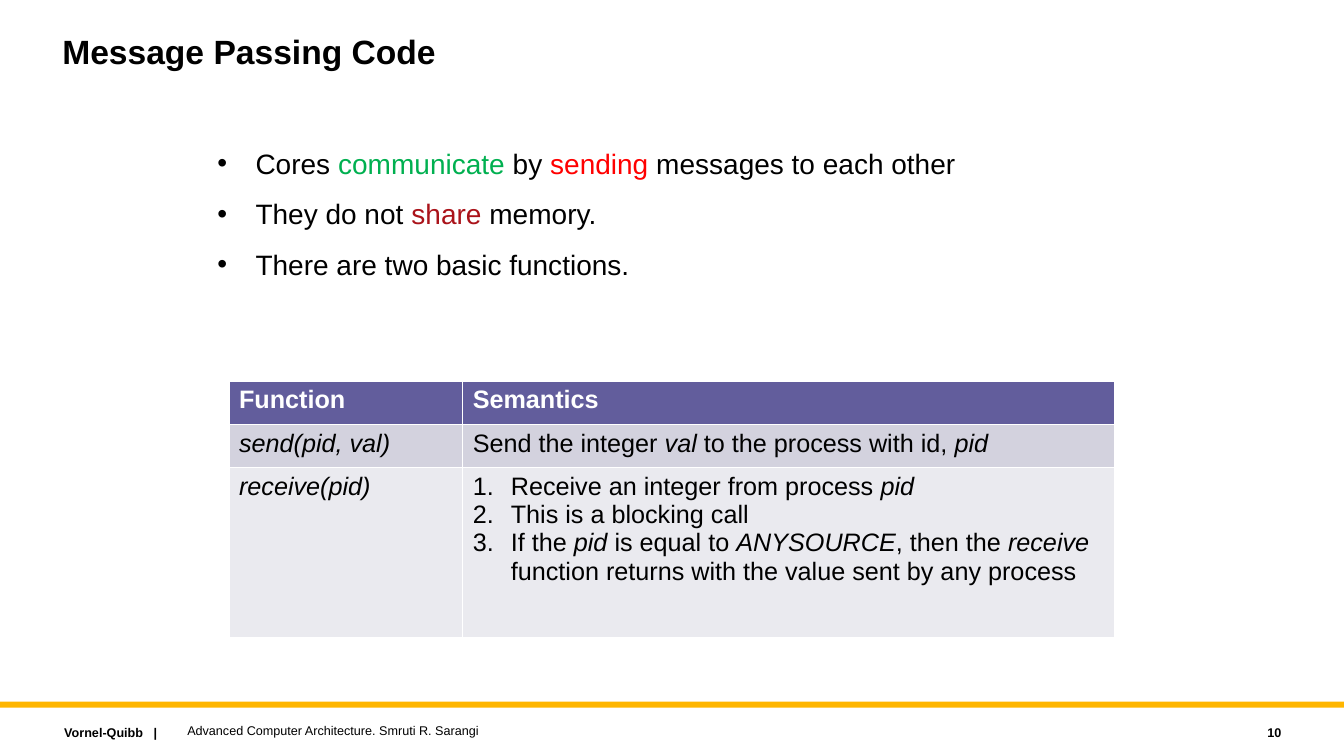
from lxml import etree
from pptx import Presentation
from pptx import util as u
from pptx.dml.color import RGBColor
from pptx.enum import shapes, text
from pptx.oxml import ns

Cm = u.Cm
HUES = {
    "black": "000000", "white": "FFFFFF", "gold": "FFB600",
    "green": "00B050", "red": "FF0000", "wine": "AA131A",
    "head": "625D9C", "dark": "D3D2DE", "light": "EAEAEF",
}


def write(para, parts, size, hue="black", bold=False):
    for words, style in parts:
        run = para.add_run()
        run.text = words
        font = run.font
        font.name = "Arial"
        font.size = u.Pt(size)
        font.bold = bold
        font.italic = style == "italic"
        font.color.rgb = RGBColor.from_string(HUES.get(style, HUES[hue]))


def mark(para, tag, **attrs):
    props = para._p.get_or_add_pPr()
    props.set("marL", str(Cm(0.96)))
    props.set("indent", str(-Cm(0.96)))
    etree.SubElement(props, ns.qn("a:buFont"), typeface="Arial")
    etree.SubElement(props, ns.qn(tag), **attrs)


deck = Presentation()
deck.slide_width = Cm(33.87)
deck.slide_height = Cm(19.05)
slide = deck.slides.add_slide(deck.slide_layouts[6])

bar = slide.shapes.add_shape(
    shapes.MSO_SHAPE.RECTANGLE, 0, Cm(17.68), deck.slide_width, Cm(0.15))
bar.shadow.inherit = False
bar.fill.solid()
bar.fill.fore_color.rgb = RGBColor.from_string(HUES["gold"])
bar.line.fill.background()

top, mid = text.MSO_ANCHOR.TOP, text.MSO_ANCHOR.MIDDLE
left, right = text.PP_ALIGN.LEFT, text.PP_ALIGN.RIGHT
points = [
    [("Cores ", ""), ("communicate", "green"), (" by ", ""),
     ("sending", "red"), (" messages to each other", "")],
    [("They do not ", ""), ("share", "wine"), (" memory.", "")],
    [("There are two basic functions.", "")],
]
boxes = [
    ((1.32, 0.76, 25.4, 2.29), [[("Message Passing Code", "")]], 24, True, top, left),
    ((5.23, 3.56, 23.42, 4.8), points, 20, False, top, left),
    ((1.37, 18.14, 5.77, 0.64), [[("Vornel-Quibb   |", "")]], 9, True, top, left),
    ((4.47, 18.08, 20.32, 0.64),
     [[("Advanced Computer Architecture. Smruti R. Sarangi", "")]], 9, False, mid, left),
    ((28.98, 18.14, 3.56, 0.64), [[("10", "")]], 9, True, mid, right),
]
for place, lines, size, bold, anchor, align in boxes:
    frame = slide.shapes.add_textbox(*map(Cm, place)).text_frame
    frame.word_wrap = True
    frame.vertical_anchor = anchor
    for i, parts in enumerate(lines):
        para = frame.add_paragraph() if i else frame.paragraphs[0]
        para.alignment = align
        if size == 24:
            para.line_spacing = 0.9
        if i:
            para.space_before = u.Pt(12)
        if lines is points:
            mark(para, "a:buChar", char="•")
        write(para, parts, size, bold=bold)

rows = [
    ("head", 1.09, [[[("Function", "")]], [[("Semantics", "")]]]),
    ("dark", 1.09, [
        [[("send(pid, val)", "italic")]],
        [[("Send the integer ", ""), ("val ", "italic"),
          ("to the process with id, ", ""), ("pid", "italic")]],
    ]),
    ("light", 4.29, [
        [[("receive(pid)", "italic")]],
        [[("Receive an integer from process ", ""), ("pid", "italic")],
         [("This is a blocking call", "")],
         [("If the ", ""), ("pid ", "italic"), ("is equal to ", ""),
          ("ANYSOURCE", "italic"), (", then the ", ""), ("receive ", "italic"),
          ("function returns with the value sent by any process", "")]],
    ]),
]
grid = slide.shapes.add_table(3, 2, Cm(5.77), Cm(9.6), Cm(22.32), Cm(6.47)).table
for col, width in zip(grid.columns, (5.89, 16.43)):
    col.width = Cm(width)
for r, (fill, height, cells) in enumerate(rows):
    grid.rows[r].height = Cm(height)
    for c, lines in enumerate(cells):
        cell = grid.cell(r, c)
        cell.fill.solid()
        cell.fill.fore_color.rgb = RGBColor.from_string(HUES[fill])
        for i, parts in enumerate(lines):
            para = cell.text_frame.add_paragraph() if i else cell.text_frame.paragraphs[0]
            if len(lines) > 1:
                mark(para, "a:buAutoNum", type="arabicPeriod")
            write(para, parts, 18, "black" if r else "white", r == 0)

deck.save("out.pptx")
